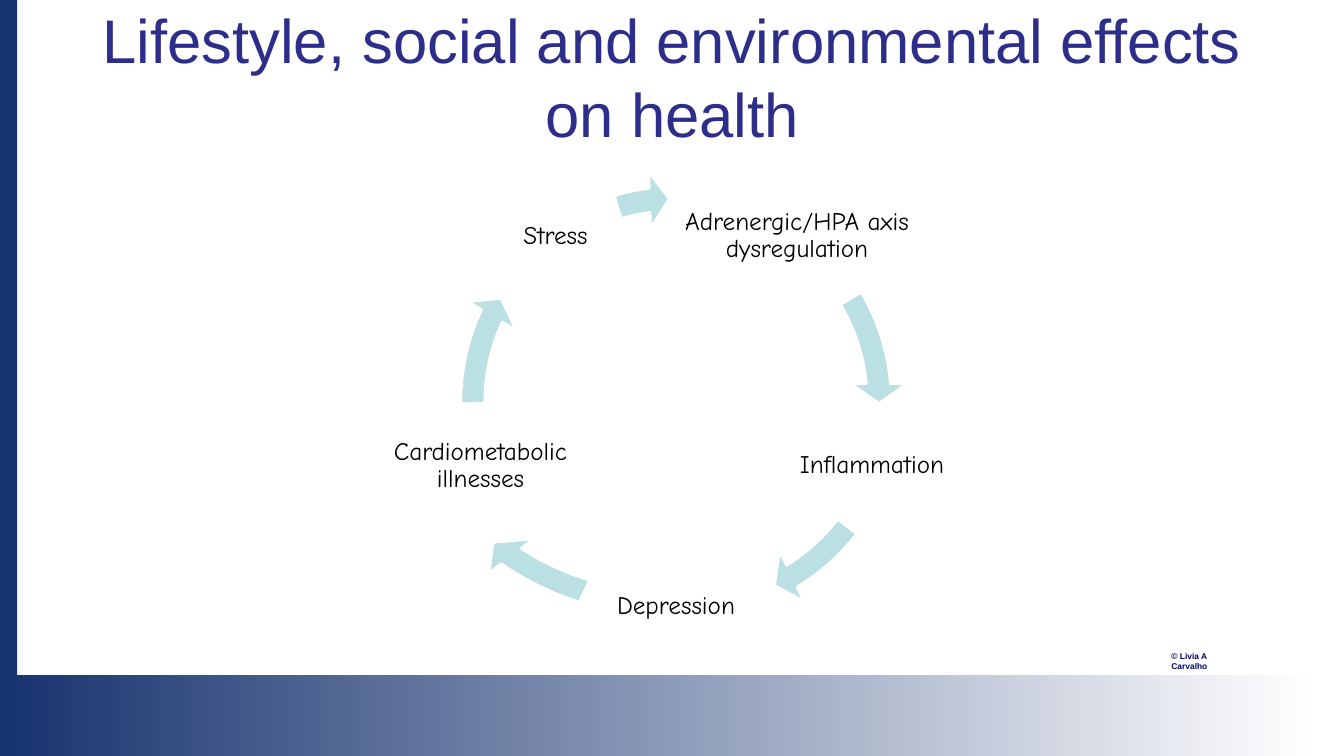
from dataclasses import dataclass

from pptx import Presentation
from pptx.dml.color import RGBColor
from pptx.enum.shapes import MSO_SHAPE
from pptx.enum.text import MSO_ANCHOR, PP_ALIGN
from pptx.shapes.autoshape import Shape
from pptx.slide import Slide
from pptx.util import Inches, Pt


@dataclass(frozen=True)
class Theme:
    navy: RGBColor = RGBColor(0x16, 0x34, 0x6F)
    footer_navy: RGBColor = RGBColor(0x17, 0x33, 0x6F)
    white: RGBColor = RGBColor(0xFF, 0xFF, 0xFF)
    title_blue: RGBColor = RGBColor(0x2D, 0x2D, 0x8A)
    credit_blue: RGBColor = RGBColor(0x00, 0x00, 0x66)
    black: RGBColor = RGBColor(0x00, 0x00, 0x00)
    arrow: RGBColor = RGBColor(0xBB, 0xE0, 0xE3)
    heading_font: str = "Arial"
    stage_font: str = "Comic Neue"
    title_size: float = 44
    stage_size: float = 18
    credit_size: float = 6
    arrow_outline: float = 2


@dataclass(frozen=True)
class Box:
    left: float
    top: float
    width: float
    height: float

    def lengths(self) -> tuple[Inches, ...]:
        return tuple(map(Inches, (self.left, self.top, self.width, self.height)))


@dataclass(frozen=True)
class Label:
    text: str
    box: Box
    font: str
    size: float
    color: RGBColor
    bold: bool = False
    align: PP_ALIGN = PP_ALIGN.CENTER
    anchor: MSO_ANCHOR = MSO_ANCHOR.MIDDLE
    line_spacing: float = 1.0
    inset: float | None = None


@dataclass(frozen=True)
class Stage:
    name: str
    left: float
    top: float
    width: float
    ring: Box
    start_angle: float
    end_angle: float


THEME = Theme()
STAGE_HEIGHT = 1.22
UPPER_ROW, MIDDLE_ROW, LOWER_ROW = 1.73, 4.01, 5.41
RING = Box(4.41, 1.69, 4.59, 4.59)
SHIFTED_RING = Box(4.51, 1.7, 4.59, 4.59)
WIDE_RING = Box(3.91, 1.69, 5.59, 4.59)
ARROW_THICKNESS = 0.052
ARROWHEAD_ANGLE = 5.6
ARROWHEAD_WIDTH = 0.061
ADJUSTMENT_PER_DEGREE = 0.6

STAGES = (
    Stage("Adrenergic/HPA axis dysregulation", 6.64, UPPER_ROW, 2.53, RING, 329.43, 354.9),
    Stage("Inflammation", 7.5, MIDDLE_ROW, 2.3, SHIFTED_RING, 37.54, 58.62),
    Stage("Depression", 5.82, LOWER_ROW, 1.77, WIDE_RING, 115.78, 136.86),
    Stage("Cardiometabolic illnesses", 3.54, MIDDLE_ROW, 2.45, RING, 179.5, 204.98),
    Stage("Stress", 4.9, UPPER_ROW, 1.22, RING, 253.3, 262.54),
)

TITLE = Label(
    "Lifestyle, social and environmental effects on health",
    Box(0.67, 0.13, 12, 1.25),
    THEME.heading_font, THEME.title_size, THEME.title_blue,
)
CREDIT = Label(
    "© Livia A Carvalho",
    Box(11.52, 6.41, 0.85, 0.2),
    THEME.heading_font, THEME.credit_size, THEME.credit_blue,
    bold=True, align=PP_ALIGN.LEFT, anchor=MSO_ANCHOR.TOP,
)


def add_label(slide: Slide, label: Label) -> None:
    frame = slide.shapes.add_textbox(*label.box.lengths()).text_frame
    frame.word_wrap = True
    frame.vertical_anchor = label.anchor
    if label.inset is not None:
        frame.margin_left = frame.margin_right = Inches(label.inset)
        frame.margin_top = frame.margin_bottom = Inches(label.inset)
    paragraph = frame.paragraphs[0]
    paragraph.text = label.text
    paragraph.alignment = label.align
    paragraph.line_spacing = label.line_spacing
    paragraph.font.name = label.font
    paragraph.font.size = Pt(label.size)
    paragraph.font.bold = label.bold
    paragraph.font.color.rgb = label.color


def add_band(slide: Slide, box: Box) -> Shape:
    band = slide.shapes.add_shape(MSO_SHAPE.RECTANGLE, *box.lengths())
    band.shadow.inherit = False
    band.line.fill.background()
    return band


def add_footer(slide: Slide) -> None:
    fill = add_band(slide, Box(0, 6.7, 13.33, 0.8)).fill
    fill.gradient()
    fill.gradient_angle = 0
    stops = ((0, THEME.footer_navy), (0.98, THEME.white))
    for stop, (position, color) in zip(fill.gradient_stops, stops):
        stop.position = position
        stop.color.rgb = color


def add_side_bar(slide: Slide) -> None:
    fill = add_band(slide, Box(0, 0, 0.17, 7.5)).fill
    fill.solid()
    fill.fore_color.rgb = THEME.navy


def add_stage(slide: Slide, stage: Stage) -> None:
    box = Box(stage.left, stage.top, stage.width, STAGE_HEIGHT)
    add_label(slide, Label(
        stage.name, box, THEME.stage_font, THEME.stage_size, THEME.black,
        line_spacing=0.9, inset=0.03,
    ))
    arrow = slide.shapes.add_shape(MSO_SHAPE.CIRCULAR_ARROW, *stage.ring.lengths())
    arrow.shadow.inherit = False
    arrow.fill.solid()
    arrow.fill.fore_color.rgb = THEME.arrow
    arrow.line.color.rgb = THEME.white
    arrow.line.width = Pt(THEME.arrow_outline)
    head, end, start = (
        angle * ADJUSTMENT_PER_DEGREE
        for angle in (ARROWHEAD_ANGLE, stage.end_angle, stage.start_angle)
    )
    for index, value in enumerate((ARROW_THICKNESS, head, end, start, ARROWHEAD_WIDTH)):
        arrow.adjustments[index] = value


def main() -> None:
    presentation = Presentation()
    presentation.slide_width = Inches(13.33)
    presentation.slide_height = Inches(7.5)
    slide = presentation.slides.add_slide(presentation.slide_layouts[6])
    add_label(slide, CREDIT)
    add_footer(slide)
    add_side_bar(slide)
    add_label(slide, TITLE)
    for stage in STAGES:
        add_stage(slide, stage)
    presentation.save("out.pptx")


if __name__ == "__main__":
    main()
